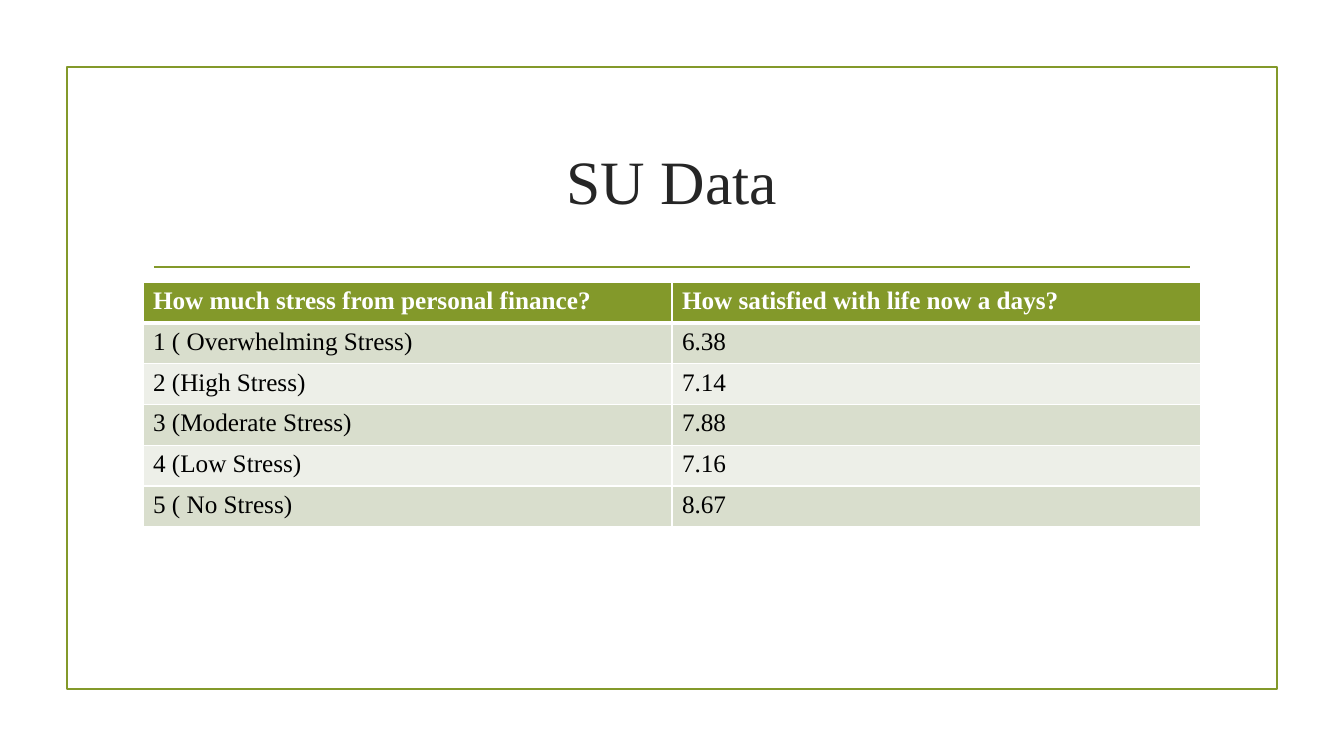
import pptx
import pptx.dml.color
import pptx.enum.shapes
import pptx.enum.text
import pptx.oxml
import pptx.oxml.ns
import pptx.util

RGBColor = pptx.dml.color.RGBColor
GREEN = RGBColor(0x83, 0x99, 0x2A)
DARK = RGBColor(0x26, 0x26, 0x26)
BLACK = RGBColor(0x00, 0x00, 0x00)
WHITE = RGBColor(0xFF, 0xFF, 0xFF)
BAND_DARK = RGBColor(0xD9, 0xDE, 0xCD)
BAND_LIGHT = RGBColor(0xED, 0xEF, 0xE8)

SLIDE_WIDTH, SLIDE_HEIGHT = 1344, 756
EMU_PER_PX = 914400 / 100.8

STRESS_ROWS = [
    ("How much stress from personal finance?", "How satisfied with life now a days?"),
    ("1 ( Overwhelming Stress)", "6.38"),
    ("2 (High Stress)", "7.14"),
    ("3 (Moderate Stress)", "7.88"),
    ("4 (Low Stress)", "7.16"),
    ("5 ( No Stress)", "8.67"),
]


def px(length):
    return pptx.util.Emu(round(length * EMU_PER_PX))


class SlideBuilder:
    font_name = "Times New Roman"
    line_width = pptx.util.Pt(1.25)

    def __init__(self, presentation):
        self.slide = presentation.slides.add_slide(presentation.slide_layouts[6])

    def frame(self, left, top, width, height):
        shape = self.slide.shapes.add_shape(
            pptx.enum.shapes.MSO_SHAPE.RECTANGLE, px(left), px(top), px(width), px(height))
        shape.shadow.inherit = False
        shape.fill.background()
        shape.line.color.rgb = GREEN
        shape.line.width = self.line_width

    def rule(self, left, right, y):
        connector = self.slide.shapes.add_connector(
            pptx.enum.shapes.MSO_CONNECTOR.STRAIGHT, px(left), px(y), px(right), px(y))
        connector.line.color.rgb = GREEN
        connector.line.width = self.line_width
        properties = connector._element.spPr
        properties.append(pptx.oxml.parse_xml(
            f'<a:effectLst {pptx.oxml.ns.nsdecls("a")}/>'))

    def run(self, paragraph, text, size, color, bold=False):
        run = paragraph.add_run()
        run.text = text
        run.font.name = self.font_name
        run.font.size = pptx.util.Pt(size)
        run.font.bold = bold
        run.font.color.rgb = color

    def title(self, text, left, top, width, height):
        box = self.slide.shapes.add_textbox(px(left), px(top), px(width), px(height))
        frame = box.text_frame
        frame.word_wrap = True
        frame.vertical_anchor = pptx.enum.text.MSO_ANCHOR.MIDDLE
        paragraph = frame.paragraphs[0]
        paragraph.alignment = pptx.enum.text.PP_ALIGN.CENTER
        self.run(paragraph, text, 44, DARK)

    def borders(self, cell, top, bottom):
        properties = cell._tc.get_or_add_tcPr()
        widths = {"lnL": 1, "lnR": 1, "lnT": top, "lnB": bottom}
        for index, (side, width) in enumerate(widths.items()):
            # Borders come before the fill in the cell properties
            properties.insert(index, pptx.oxml.parse_xml(
                f'<a:{side} {pptx.oxml.ns.nsdecls("a")} w="{pptx.util.Pt(width)}">'
                f'<a:solidFill><a:srgbClr val="{WHITE}"/></a:solidFill></a:{side}>'))

    def table(self, rows, left, top, width, height):
        table = self.slide.shapes.add_table(
            len(rows), len(rows[0]), px(left), px(top), px(width), px(height)).table
        for row_index, texts in enumerate(rows):
            header = row_index == 0
            band = BAND_DARK if row_index % 2 else BAND_LIGHT
            for column_index, text in enumerate(texts):
                cell = table.cell(row_index, column_index)
                cell.fill.solid()
                cell.fill.fore_color.rgb = GREEN if header else band
                self.borders(cell, top=3 if row_index == 1 else 1, bottom=3 if header else 1)
                self.run(cell.text_frame.paragraphs[0], text, 18,
                         WHITE if header else BLACK, bold=header)


def main():
    presentation = pptx.Presentation()
    presentation.slide_width = px(SLIDE_WIDTH)
    presentation.slide_height = px(SLIDE_HEIGHT)
    builder = SlideBuilder(presentation)

    # Border and rule under the title
    builder.frame(67, 67, 1210, 622)
    builder.rule(154, 1190, 267)

    # Title and survey table share the same column
    builder.title("SU Data", 143, 108, 1058, 144)
    builder.table(STRESS_ROWS, 143, 282, 1058, 245)

    presentation.save("out.pptx")


if __name__ == "__main__":
    main()
